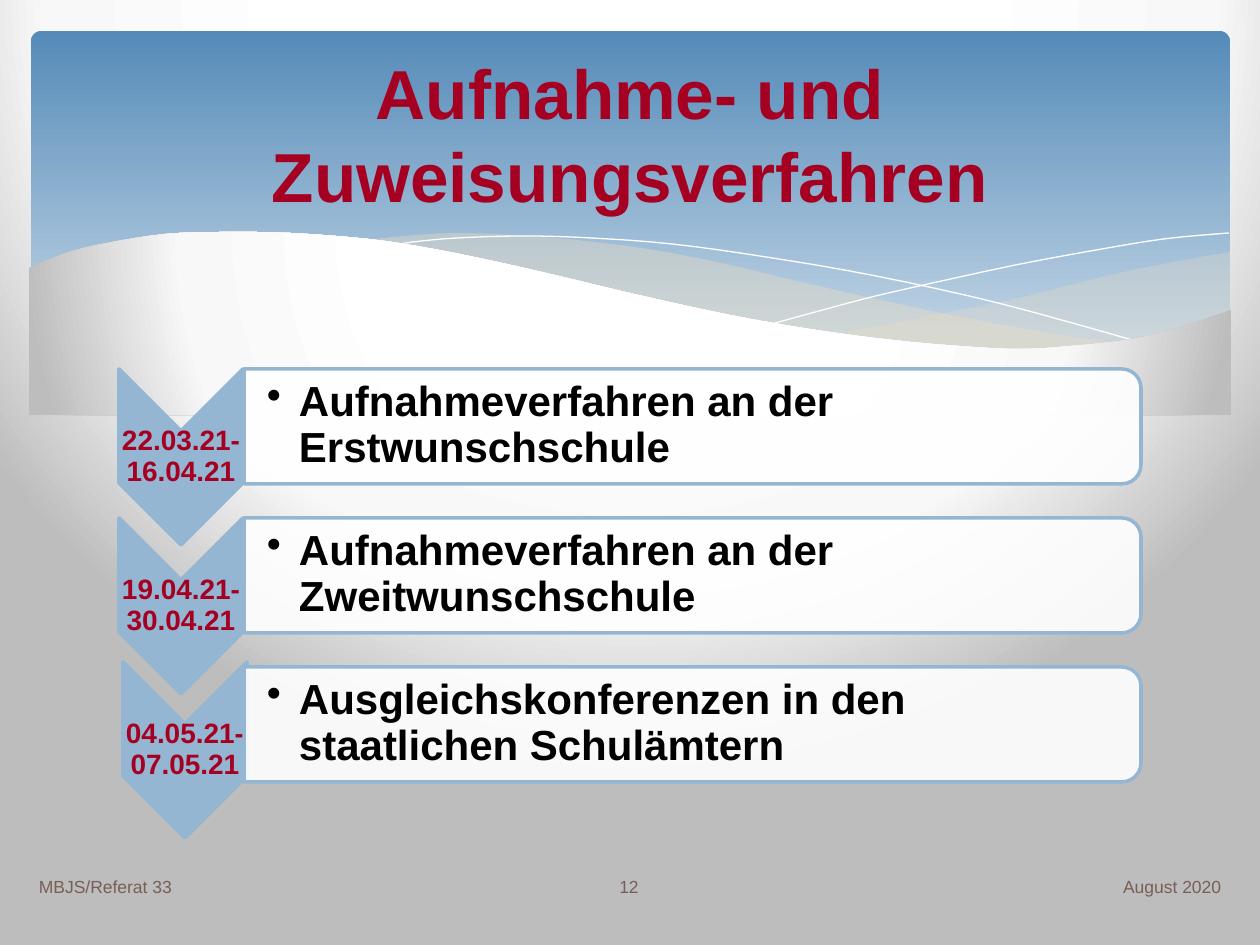
from lxml import etree
from pptx import Presentation, util as u
from pptx.dml.color import RGBColor
from pptx.enum import shapes as s, text as t
from pptx.oxml import parse_xml
from pptx.oxml.ns import nsdecls, qn

PX = u.Inches(1) // 126
WHITE = RGBColor(0xFF, 0xFF, 0xFF)
BLACK = RGBColor(0, 0, 0)
RED = RGBColor(0xA5, 0x00, 0x21)
BLUE = RGBColor(0x94, 0xB6, 0xD2)
DEEP = RGBColor(0x55, 0x8B, 0xB8)
PALE = RGBColor(0xBF, 0xD3, 0xE4)
SAND = RGBColor(0xEB, 0xDD, 0xC3)
BROWN = RGBColor(0x77, 0x5F, 0x55)
GLOW = f"""<a:gradFill {nsdecls('a')} rotWithShape="1"><a:gsLst>
<a:gs pos="40000"><a:srgbClr val="FFFFFF"/></a:gs>
<a:gs pos="74000"><a:srgbClr val="F8F8F8"/></a:gs>
<a:gs pos="100000"><a:srgbClr val="BDBDBD"/></a:gs></a:gsLst>
<a:path path="circle"><a:fillToRect l="20000" t="-40000" r="20000" b="140000"/></a:path>
</a:gradFill>"""


def paint(shape, fill, alpha=100, line=None, width=2):
    shape.shadow.inherit = False
    if fill:
        shape.fill.solid()
        shape.fill.fore_color.rgb = fill
        tint = shape.fill._xPr.find(".//" + qn("a:srgbClr"))
        if alpha < 100:
            etree.SubElement(tint, qn("a:alpha")).set("val", str(alpha * 1000))
    else:
        shape.fill.background()
    if line:
        shape.line.color.rgb = line
        shape.line.width = u.Pt(width)
    else:
        shape.line.fill.background()


def write(shape, words, size, color, align, bold=True, pads=(13, 6, 13, 6)):
    """Fill a text shape with one paragraph; pads are left, top, right, bottom."""
    frame = shape.text_frame
    frame.word_wrap = True
    frame.auto_size = t.MSO_AUTO_SIZE.NONE
    frame.vertical_anchor = t.MSO_ANCHOR.MIDDLE
    (frame.margin_left, frame.margin_top,
     frame.margin_right, frame.margin_bottom) = [n * PX for n in pads]
    para = frame.paragraphs[0]
    para.text = words
    para.alignment = align
    font = para.font
    font.name, font.size, font.bold = "Arial", u.Pt(size), bold
    font.color.rgb = color
    return para


deck = Presentation()
deck.slide_width, deck.slide_height = u.Inches(10), u.Inches(7.5)
slide = deck.slides.add_slide(deck.slide_layouts[5])
tree = slide.shapes
slide.background.fill.solid()
back = slide._element.cSld.bg.bgPr
back.replace(back[0], parse_xml(GLOW))

# Blue banner
banner = tree.add_shape(s.MSO_SHAPE.ROUNDED_RECTANGLE,
                        *[n * PX for n in (31, 31, 1199, 340)])
banner.adjustments[0] = 0.03
paint(banner, None)
banner.fill.gradient()
banner.fill.gradient_angle = 270
for stop, tone, place in zip(banner.fill.gradient_stops, (DEEP, PALE), (0, 0.9)):
    stop.color.rgb = tone
    stop.position = place

# Waves: fill, opacity, line, smooth edges joined at corners
waves = [
    (SAND, 29, None, [
        [(1230, 252), (1178, 261), (1123, 272), (1085, 281), (1014, 299),
         (949, 312), (890, 324), (833, 334)],
        [(833, 334), (906, 343), (969, 349), (1026, 350), (1076, 348),
         (1130, 340), (1178, 330), (1230, 311)]]),
    (SAND, 40, None, [
        [(1125, 344), (1055, 334), (977, 320), (890, 302), (793, 280), (717, 262),
         (648, 249), (586, 241), (529, 236), (455, 233), (394, 237), (360, 241)],
        [(360, 241), (431, 251), (509, 266), (566, 280), (668, 302), (757, 321),
         (838, 335), (910, 345), (974, 349), (1031, 350), (1080, 349), (1125, 344)]]),
    (None, 100, WHITE, [
        [(389, 246), (413, 242), (457, 238), (524, 236), (591, 238), (672, 244),
         (766, 257), (876, 276), (1002, 304), (1143, 343)]]),
    (None, 100, WHITE, [
        [(772, 324), (823, 310), (876, 296), (942, 281), (1016, 265), (1091, 251),
         (1164, 239), (1229, 233)]]),
    (WHITE, 100, None, [
        [(1231, 310), (1184, 326), (1133, 339), (1071, 346), (1019, 349),
         (959, 346), (892, 340), (816, 330), (730, 315), (634, 294), (563, 277),
         (493, 261), (428, 248), (368, 239), (290, 233), (223, 232), (166, 234),
         (107, 243), (66, 253), (29, 268)],
        [(29, 415), (1231, 415)]]),
]
STEPS = 4
for fill, alpha, line, edges in waves:
    dots = []
    for edge in edges:
        ends = [edge[0], *edge, edge[-1]]
        for a, b, c, d in zip(ends, ends[1:], ends[2:], ends[3:]):
            for k in range(STEPS):
                f = k / STEPS  # Catmull-Rom spline from b to c
                dots.append([round(PX * (q + f * (r - p) / 2
                                         + f**2 * (2 * p - 5 * q + 4 * r - v) / 2
                                         + f**3 * (3 * q - p - 3 * r + v) / 2))
                             for p, q, r, v in zip(a, b, c, d)])
        dots.append([n * PX for n in edge[-1]])
    pen = tree.build_freeform(*dots[0])
    pen.add_line_segments(dots[1:], close=line is None)
    wave = pen.convert_to_shape()
    paint(wave, fill, alpha, line, 0)
props = wave._element.spPr
props.replace(props.find(qn("a:solidFill")), parse_xml(GLOW))

# Steps: dates, task, chevron centre
rows = [
    ("22.03.21-16.04.21", "Aufnahmeverfahren an der Erstwunschschule", 181, 457),
    ("19.04.21-30.04.21", "Aufnahmeverfahren an der Zweitwunschschule", 181, 606),
    ("04.05.21-07.05.21", "Ausgleichskonferenzen in den staatlichen Schulämtern", 185, 750),
]
for i, (dates, task, x, y) in enumerate(rows):
    mid = 426 + 149 * i
    arrow = tree.add_shape(s.MSO_SHAPE.CHEVRON,
                           *[n * PX for n in (x - 88, y - 62, 176, 124)])
    arrow.rotation = 90
    paint(arrow, BLUE, line=BLUE)
    label = tree.add_textbox(*[n * PX for n in (x - 62, y - 27, 124, 54)])
    para = write(label, dates, 16, RED, t.PP_ALIGN.CENTER, pads=(1, 1, 1, 1))
    para.line_spacing = 0.9

    bar = tree.add_shape(s.MSO_SHAPE.ROUND_2_SAME_RECTANGLE,
                         *[n * PX for n in (692 - 57, mid - 448, 115, 897)])
    bar.rotation = 90
    paint(bar, WHITE, 90, BLUE)
    label = tree.add_textbox(*[n * PX for n in (243, mid - 52, 892, 104)])
    para = write(label, task, 24, BLACK, t.PP_ALIGN.LEFT, pads=(24, 2, 2, 2))
    para.line_spacing = 0.9
    props = para._p.get_or_add_pPr()
    props.set("marL", str(32 * PX))
    props.set("indent", str(-32 * PX))
    dot = parse_xml(f'<a:buChar {nsdecls("a")} char="•"/>')
    props.find(qn("a:defRPr")).addprevious(dot)

# Footer
for words, x, w, align in [("August 2020", 712, 522, t.PP_ALIGN.RIGHT),
                           ("MBJS/Referat 33", 26, 522, t.PP_ALIGN.LEFT),
                           ("12", 549, 160, t.PP_ALIGN.CENTER)]:
    foot = tree.add_textbox(*[n * PX for n in (x, 862, w, 50)])
    write(foot, words, 10, BROWN, align, bold=False)

# Title, brought in front of the banner
title = tree.title
title.left, title.top, title.width, title.height = [n * PX for n in (63, 47, 1134, 173)]
write(title, "Aufnahme- und Zuweisungsverfahren", 39.6, RED, t.PP_ALIGN.CENTER)
tree._spTree.append(title._element)

deck.save("out.pptx")
